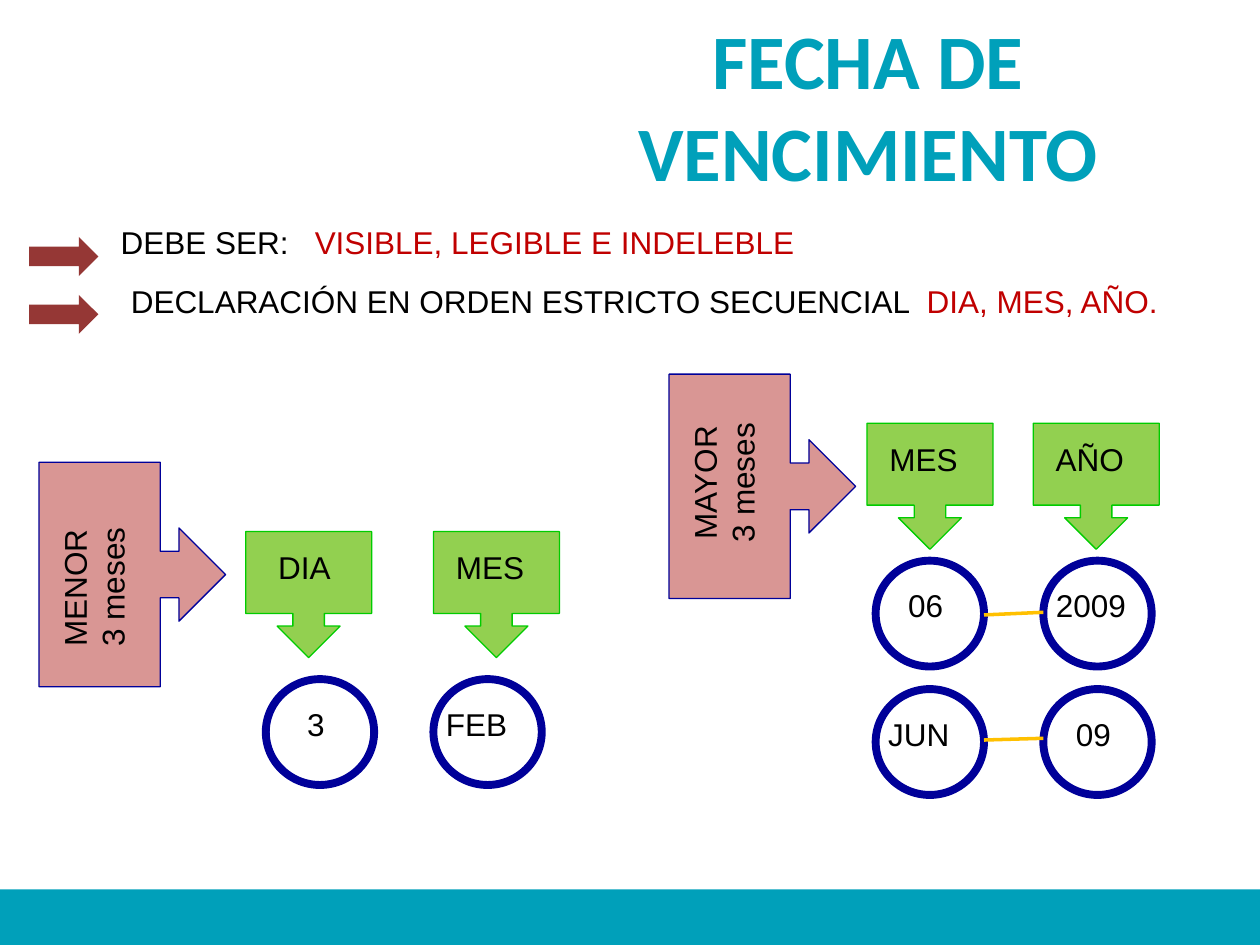
from lxml import etree
from pptx import Presentation
from pptx.dml.color import RGBColor
from pptx.enum.shapes import MSO_CONNECTOR, MSO_SHAPE
from pptx.enum.text import PP_ALIGN
from pptx.oxml.ns import qn
from pptx.util import Pt

RECT, ELLIPSE = MSO_SHAPE.RECTANGLE, MSO_SHAPE.OVAL
ARROW, CALLOUT = MSO_SHAPE.RIGHT_ARROW, MSO_SHAPE.DOWN_ARROW_CALLOUT
STRAIGHT = MSO_CONNECTOR.STRAIGHT
LEFT, CENTER = PP_ALIGN.LEFT, PP_ALIGN.CENTER

TEAL = RGBColor(0x00, 0xA0, 0xBA)
BROWN = RGBColor(0x95, 0x37, 0x35)
RED = RGBColor(0xC0, 0x00, 0x00)
BLACK = RGBColor(0x00, 0x00, 0x00)
PINK = RGBColor(0xD9, 0x96, 0x94)
NAVY = RGBColor(0x00, 0x00, 0x99)
LIME = RGBColor(0x92, 0xD0, 0x50)
GREEN = RGBColor(0x00, 0xCC, 0x00)
GOLD = RGBColor(0xFF, 0xC0, 0x00)

TITLE = "FECHA DE VENCIMIENTO"
# each rule: lead, emphasis, arrow top, text box, tab stop
RULES = [
    ("DEBE SER:", "VISIBLE, LEGIBLE E INDELEBLE", 135.4, (61.9, 123.8, 607.7, 36), 110.9),
    ("DECLARACIÓN EN ORDEN ESTRICTO SECUENCIAL", "DIA, MES, AÑO.", 168.5,
     (67.7, 157.7, 652.3, 65.5), 454.8),
]
TERMS = [
    (["MENOR", "3 meses"], LEFT, (11.5, 275), (4.3, 288)),
    (["MAYOR", "3 meses"], CENTER, (371.5, 224.6), (364.3, 243.4)),
]
# each field: name, left, top, label indent
FIELDS = [
    ("MES", 247.7, 303.8, 5.8), ("DIA", 140.4, 303.8, 11.5),
    ("AÑO", 590.4, 241.9, 5.8), ("MES", 495.4, 241.9, 5.8),
]
# each example: value, left, top, label indent
EXAMPLES = [
    ("3", 151.9, 388.1, 16.6), ("FEB", 247.7, 388.1, 0),
    ("06", 500.4, 320.4, 11.5), ("2009", 596.2, 320.4, 0),
    ("JUN", 500.4, 393.8, 0), ("09", 596.2, 393.8, 11.5),
]
LINK_ENDS = [(351.4, 349.9), (422.9, 421.9)]
LINK_LEFT, LINK_RIGHT = 562.3, 596.2
FIELD_SIDE = 72
CIRCLE_W, CIRCLE_H = 61.9, 60.5

deck = Presentation()
deck.slide_width, deck.slide_height = Pt(720), Pt(540)
slide = deck.slides.add_slide(deck.slide_layouts[6])


def add_figure(kind, box, fill=None, outline=None, weight=0.75):
    figure = slide.shapes.add_shape(kind, *map(Pt, box))
    figure.shadow.inherit = False
    if fill is None:
        figure.fill.background()
    else:
        figure.fill.solid()
        figure.fill.fore_color.rgb = fill
    if outline is None:
        figure.line.fill.background()
    else:
        figure.line.color.rgb = outline
        figure.line.width = Pt(weight)
    return figure


def add_text(lines, box, align=LEFT, size=18, face="Arial", color=BLACK, bold=False):
    label = slide.shapes.add_textbox(*map(Pt, box))
    frame = label.text_frame
    frame.word_wrap = True
    frame.text = "\n".join(lines)
    for paragraph in frame.paragraphs:
        paragraph.alignment = align
        font = paragraph.font
        font.size, font.name, font.bold = Pt(size), face, bold
        font.color.rgb = color
    return label


def add_rule(lead, emphasis, arrow_top, box, tab):
    add_figure(ARROW, (16.6, arrow_top, 39.6, 22.3), BROWN)
    label = slide.shapes.add_textbox(*map(Pt, box))
    label.text_frame.word_wrap = True
    paragraph = label.text_frame.paragraphs[0]
    stops = etree.SubElement(paragraph._p.get_or_add_pPr(), qn("a:tabLst"))
    etree.SubElement(stops, qn("a:tab"), pos=str(Pt(tab)), algn="l")
    paragraph.font.size, paragraph.font.name = Pt(18), "Arial"
    for words, color in ((lead + "\t", BLACK), (emphasis, RED)):
        run = paragraph.add_run()
        run.text = words
        run.font.color.rgb = color


add_figure(RECT, (0, 508.3, 720, 31.7), TEAL)
add_text([TITLE], (286.6, 3.6, 419, 300), CENTER, 44, "Calibri", TEAL, True)

for rule in RULES:
    add_rule(*rule)

for lines, align, arrow_at, label_at in TERMS:
    add_figure(CALLOUT, (*arrow_at, 128.2, 106.6), PINK, NAVY).rotation = 270
    add_text(lines, (*label_at, 112.3, 64.8), align).rotation = 270

for name, left, top, indent in FIELDS:
    add_figure(CALLOUT, (left, top, FIELD_SIDE, FIELD_SIDE), LIME, GREEN)
    add_text([name], (left + indent, top + 5.8, 67, 36.7))

for value, left, top, indent in EXAMPLES:
    add_figure(ELLIPSE, (left, top, CIRCLE_W, CIRCLE_H), None, NAVY, 4.5)
    add_text([value], (left + indent, top + 11.2, 68.4 - 2 * indent, 36.7))

for start, end in LINK_ENDS:
    link = slide.shapes.add_connector(STRAIGHT, Pt(LINK_LEFT), Pt(start), Pt(LINK_RIGHT), Pt(end))
    link.line.color.rgb = GOLD
    link.line.width = Pt(2)
    etree.SubElement(link._element.spPr, qn("a:effectLst"))

deck.save("out.pptx")
